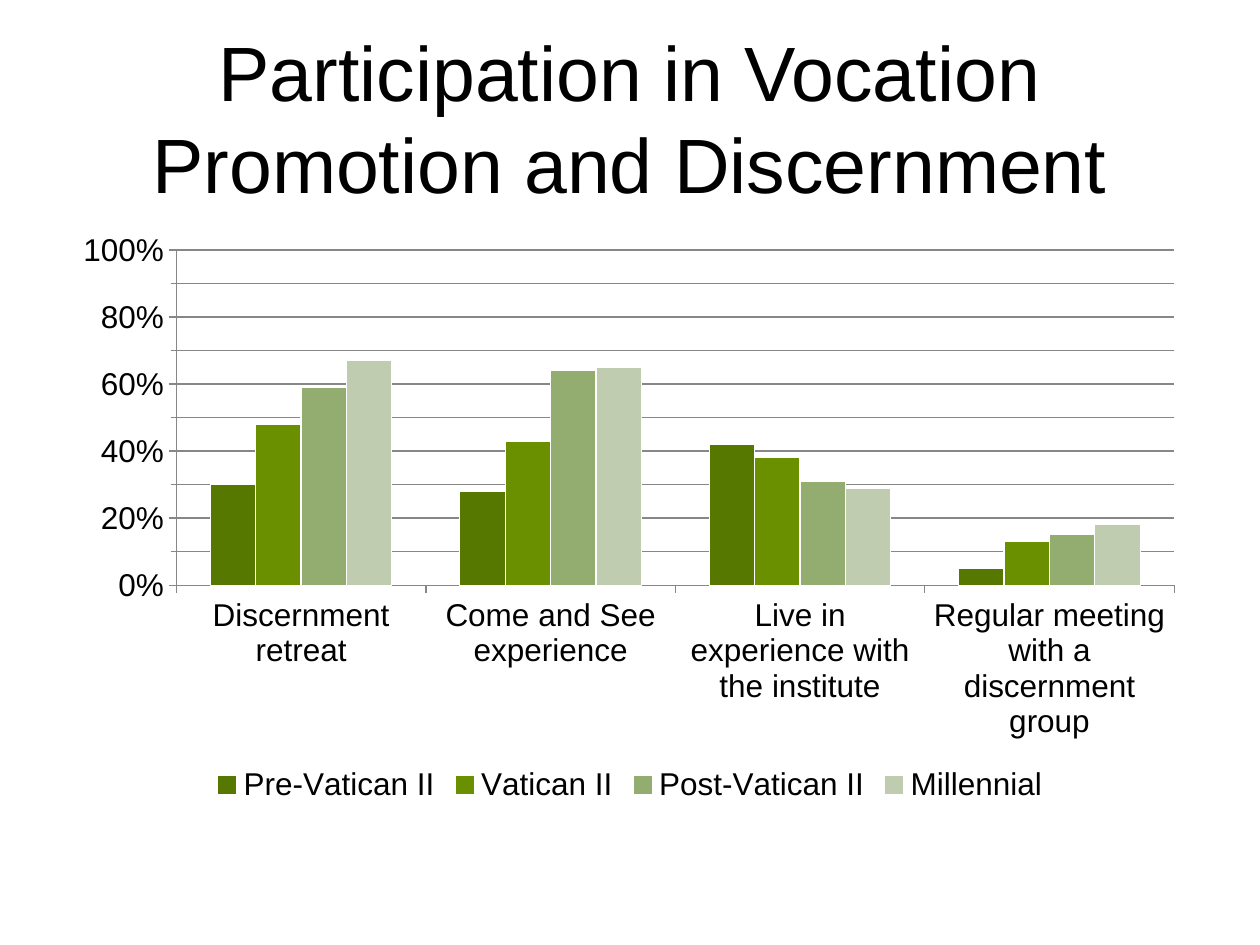
"""Build a slide with a column chart of participation in vocation promotion by generation."""
import copy

import pptx
import pptx.chart.data
import pptx.dml.color
import pptx.enum.chart
import pptx.enum.text
import pptx.oxml
import pptx.oxml.ns
import pptx.util

Inches = pptx.util.Inches
Pt = pptx.util.Pt
Rgb = pptx.dml.color.RGBColor.from_string

TITLE = "Participation in Vocation Promotion and Discernment"
CATEGORIES = [
    "Discernment retreat",
    "Come and See experience",
    "Live in experience with the institute",
    "Regular meeting with a discernment group",
]
SERIES = {
    "Pre-Vatican II": (0.30, 0.28, 0.42, 0.05),
    "Vatican II": (0.48, 0.43, 0.38, 0.13),
    "Post-Vatican II": (0.59, 0.64, 0.31, 0.15),
    "Millennial": (0.67, 0.65, 0.29, 0.18),
}
COLORS = {
    "text": "000000",
    "grid": "878787",
    "edge": "FFFFFF",
    "Pre-Vatican II": "567800",
    "Vatican II": "6A9000",
    "Post-Vatican II": "93AC70",
    "Millennial": "BFCCAF",
}
FONT = "Arial"
PLOT_AREA = {"x": 0.1, "y": 0.05, "w": 0.88, "h": 0.57}
VALUE_AXIS = {
    "minimum_scale": 0,
    "maximum_scale": 1,
    "major_unit": 0.2,
    "minor_unit": 0.1,
    "has_major_gridlines": True,
    "has_minor_gridlines": True,
    "major_tick_mark": pptx.enum.chart.XL_TICK_MARK.OUTSIDE,
    "minor_tick_mark": pptx.enum.chart.XL_TICK_MARK.OUTSIDE,
}
LEGEND = {"position": pptx.enum.chart.XL_LEGEND_POSITION.BOTTOM, "include_in_layout": False}


def set_all(target, values):
    for name, value in values.items():
        setattr(target, name, value)


def set_font(font, size):
    set_all(font, {"name": FONT, "size": Pt(size), "bold": False})
    font.color.rgb = Rgb(COLORS["text"])


def set_line(line, color, width=0.75):
    line.color.rgb = Rgb(COLORS[color])
    line.width = Pt(width)


def add_title(page):
    box = page.shapes.add_textbox(Inches(0.5), Inches(0.3), Inches(9), Inches(1.25))
    frame = box.text_frame
    set_all(frame, {"word_wrap": True, "vertical_anchor": pptx.enum.text.MSO_ANCHOR.MIDDLE})
    para = frame.paragraphs[0]
    para.alignment = pptx.enum.text.PP_ALIGN.CENTER
    span = para.add_run()
    span.text = TITLE
    set_font(span.font, 44)


def place_plot_area(chart):
    parts = ['<c:layoutTarget val="inner"/>', '<c:xMode val="edge"/>', '<c:yMode val="edge"/>']
    parts += [f'<c:{name} val="{value}"/>' for name, value in PLOT_AREA.items()]
    layout = pptx.oxml.parse_xml(
        f'<c:layout {pptx.oxml.ns.nsdecls("c")}><c:manualLayout>'
        f'{"".join(parts)}</c:manualLayout></c:layout>'
    )
    area = chart.plots[0]._element.getparent()
    for old in area.findall(pptx.oxml.ns.qn("c:layout")):
        area.remove(old)
    area.insert(0, layout)


def match_minor_gridlines(axis):
    major, minor = (
        axis._element.find(pptx.oxml.ns.qn(f"c:{level}Gridlines")) for level in ("major", "minor")
    )
    minor.append(copy.deepcopy(major.find(pptx.oxml.ns.qn("c:spPr"))))


def add_participation_chart(page):
    data = pptx.chart.data.CategoryChartData(number_format="0%")
    data.categories = CATEGORIES
    for name, values in SERIES.items():
        data.add_series(name, values)
    chart = page.shapes.add_chart(
        pptx.enum.chart.XL_CHART_TYPE.COLUMN_CLUSTERED,
        Inches(0.5), Inches(1.75), Inches(9), Inches(4.67), data,
    ).chart
    set_font(chart.font, 18)
    set_all(chart, {"has_title": False, "has_legend": True})
    set_all(chart.legend, LEGEND)

    plot = chart.plots[0]
    set_all(plot, {"gap_width": 150, "overlap": 0, "vary_by_categories": False})
    for series in plot.series:
        series.format.fill.solid()
        series.format.fill.fore_color.rgb = Rgb(COLORS[series.name])
        set_line(series.format.line, "edge")

    value_axis = chart.value_axis
    set_all(value_axis, VALUE_AXIS)
    set_all(value_axis.tick_labels, {"number_format": "0%", "number_format_is_linked": False})
    chart.category_axis.major_tick_mark = pptx.enum.chart.XL_TICK_MARK.OUTSIDE
    for part in (value_axis, chart.category_axis, value_axis.major_gridlines):
        set_line(part.format.line, "grid")
    match_minor_gridlines(value_axis)
    place_plot_area(chart)


def main():
    deck = pptx.Presentation()
    set_all(deck, {"slide_width": Inches(10), "slide_height": Inches(7.5)})
    page = deck.slides.add_slide(deck.slide_layouts[6])
    add_title(page)
    add_participation_chart(page)
    deck.save("out.pptx")


if __name__ == "__main__":
    main()
